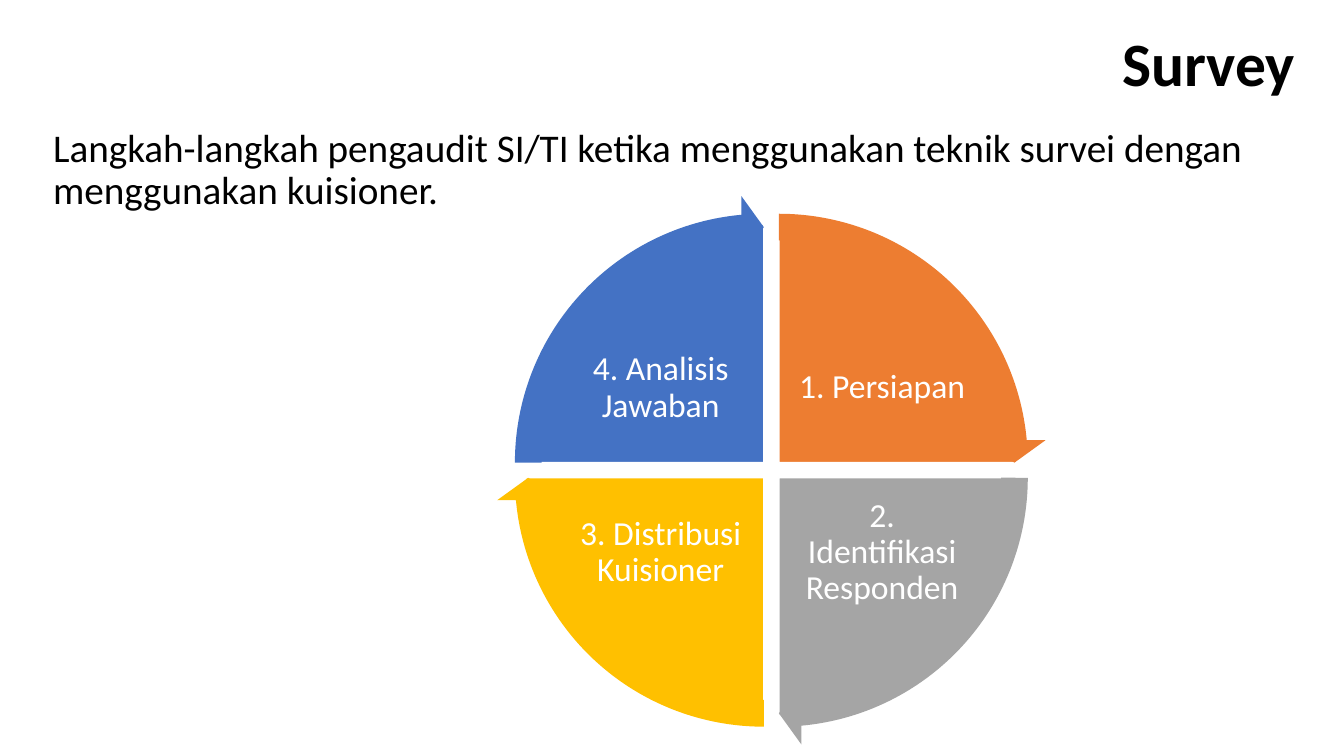
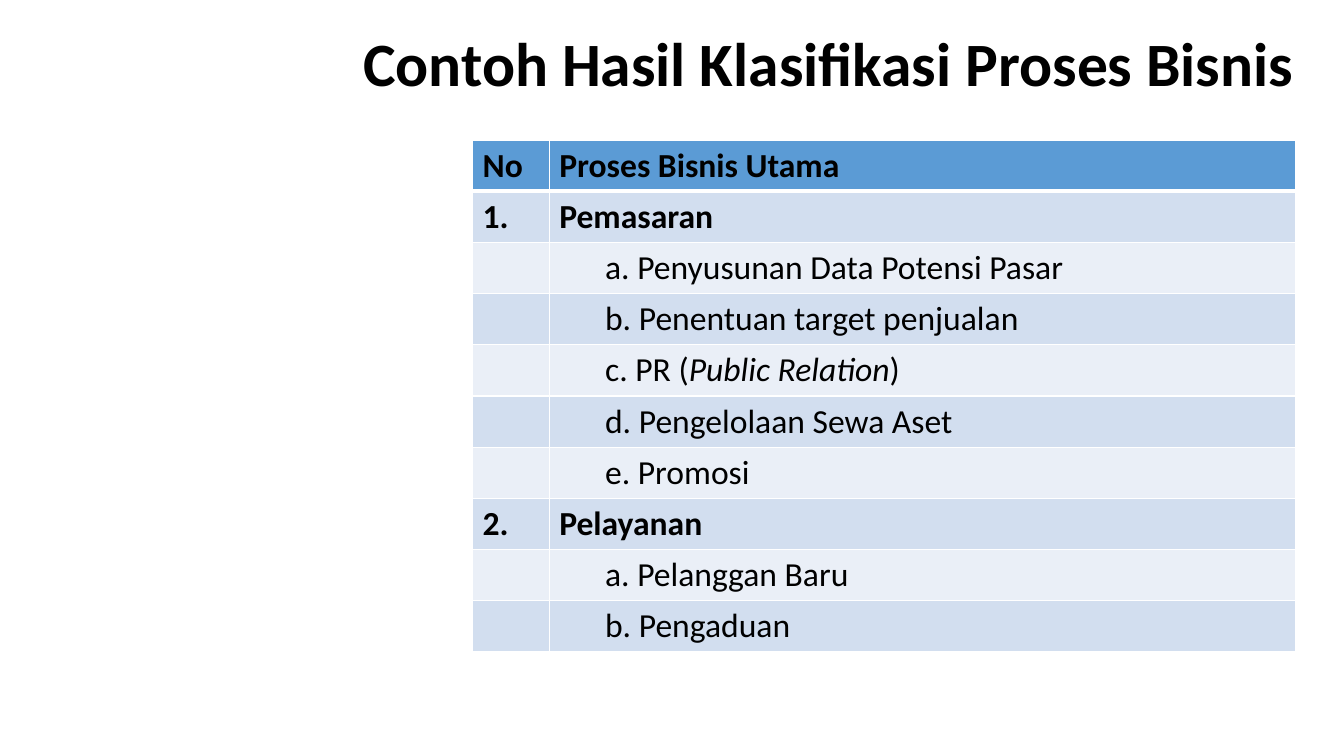
from lxml import etree
from pptx import Presentation
from pptx.dml.color import RGBColor
from pptx.enum.shapes import MSO_SHAPE
from pptx.enum.text import MSO_ANCHOR, MSO_AUTO_SIZE, PP_ALIGN
from pptx.oxml.ns import qn
from pptx.util import Cm, Pt

COLORS = {
    "text": "000000", "white": "FFFFFF",
    "orange": "ED7D31", "gray": "A5A5A5", "gold": "FFC000", "blue": "4472C4",
    "header": "5B9BD5", "band": "D2DEEF", "band_light": "EAEFF7",
}
FONT = "Calibri"
QUARTER = 54  # 90 degrees in adjustment units


def rgb(name):
    return RGBColor.from_string(COLORS[name])


class Deck:
    """Holds the presentation, its style and the current slide."""

    def __init__(self):
        self.prs = Presentation()
        self.prs.slide_width, self.prs.slide_height = Cm(33.87), Cm(19.05)
        self.s = None

    def font(self, p, size, color="text", bold=False):
        p.font.name, p.font.size, p.font.bold = FONT, Pt(size), bold
        p.font.color.rgb = rgb(color)

    def slide(self, title):
        self.s = self.prs.slides.add_slide(self.prs.slide_layouts[5])
        sp = self.s.shapes.title
        sp.left, sp.top, sp.width, sp.height = Cm(6.27), Cm(0.53), Cm(26.62), Cm(2.31)
        tf = sp.text_frame
        tf.text = title
        tf.auto_size = MSO_AUTO_SIZE.NONE
        tf.vertical_anchor = MSO_ANCHOR.MIDDLE
        p = tf.paragraphs[0]
        p.alignment, p.line_spacing = PP_ALIGN.RIGHT, 0.9
        self.font(p, 44, bold=True)

    def text(self, text, x, y, w, h, size, color="text"):
        tf = self.s.shapes.add_textbox(Cm(x), Cm(y), Cm(w), Cm(h)).text_frame
        tf.word_wrap = True
        tf.text = text
        tf.paragraphs[0].line_spacing = 0.9
        self.font(tf.paragraphs[0], size, color)
        return tf

    def label(self, text, cx, cy, w, h):
        """Add white text centred on a point."""
        tf = self.text(text, cx - w / 2, cy - h / 2, w, h, 24, "white")
        tf.margin_left = tf.margin_right = tf.margin_top = tf.margin_bottom = Cm(0.08)
        tf.vertical_anchor = MSO_ANCHOR.MIDDLE
        tf.paragraphs[0].alignment = PP_ALIGN.CENTER

    def round_shape(self, kind, cx, cy, size, adjustments, color, outline=None):
        """Add a preset shape in a square centred on a point."""
        sp = self.s.shapes.add_shape(
            kind, Cm(cx - size / 2), Cm(cy - size / 2), Cm(size), Cm(size))
        for i, value in enumerate(adjustments):
            sp.adjustments[i] = value
        sp.shadow.inherit = False
        sp.fill.solid()
        sp.fill.fore_color.rgb = rgb(color)
        if outline:
            sp.line.color.rgb = rgb(outline)
            sp.line.width = Pt(1)
        else:
            sp.line.fill.background()

    def borders(self, cell, top, bottom):
        """Draw white cell borders; top and bottom are widths in points."""
        tcPr = cell._tc.get_or_add_tcPr()
        for side, width in (("L", 1), ("R", 1), ("T", top), ("B", bottom)):
            ln = etree.SubElement(tcPr, qn(f"a:ln{side}"), w=str(Pt(width)))
            fill = etree.SubElement(ln, qn("a:solidFill"))
            etree.SubElement(fill, qn("a:srgbClr"), val=COLORS["white"])

    def table(self, rows, x, y, widths, row_height):
        """Add a table; a row without a number is an indented sub-item."""
        table = self.s.shapes.add_table(
            len(rows), len(widths), Cm(x), Cm(y),
            Cm(sum(widths)), Cm(row_height * len(rows))).table
        table.first_row = table.horz_banding = False
        for column, width in zip(table.columns, widths):
            column.width = Cm(width)
        for i, (number, runs) in enumerate(rows):
            table.rows[i].height = Cm(row_height)
            color = "header" if i == 0 else "band" if i % 2 else "band_light"
            for j, parts in enumerate(([number], runs)):
                cell = table.cell(i, j)
                self.borders(cell, 3 if i == 1 else 1, 3 if i == 0 else 1)
                cell.fill.solid()
                cell.fill.fore_color.rgb = rgb(color)
                p = cell.text_frame.paragraphs[0]
                self.font(p, 24, bold=bool(number))
                for k, part in enumerate(filter(None, parts)):
                    r = p.add_run()
                    r.text = part
                    if k % 2:
                        r.font.italic = True
            if not number:
                table.cell(i, 1).margin_left = Cm(1.41)


def survey_slide(deck):
    deck.slide("Survey")
    deck.text("Langkah-langkah pengaudit SI/TI ketika menggunakan teknik survei "
              "dengan menggunakan kuisioner.", 1.09, 3.12, 31.8, 14.02, 28)
    cx, cy, gap = 19.44, 11.85, 0.19
    # text, colour, horizontal and vertical direction, start angle
    steps = [
        ("1. Persiapan", "orange", 1, -1, 3 * QUARTER),
        ("2. Identifikasi Responden", "gray", 1, 1, 0),
        ("3. Distribusi Kuisioner", "gold", -1, 1, QUARTER),
        ("4. Analisis Jawaban", "blue", -1, -1, 2 * QUARTER),
    ]
    for text, color, dx, dy, start in steps:
        end = (start + QUARTER) % (4 * QUARTER)
        deck.round_shape(MSO_SHAPE.PIE, cx + dx * gap, cy + dy * gap, 11.99,
                         (start, end), color, "white")
        deck.label(text, cx + dx * 2.79, cy + dy * 2.07, 4.42, 3.28)
    for _, color, dx, dy, start in steps:
        deck.round_shape(MSO_SHAPE.CIRCULAR_ARROW, cx + dx * gap, cy + dy * gap, 13.49,
                         (0.05, 3.28, start + 50.72, start, 0.06), color)


def process_slide(deck):
    deck.slide("Contoh Hasil Klasifikasi Proses Bisnis")
    rows = [
        ("No", ["Proses Bisnis Utama"]),
        ("1.", ["Pemasaran"]),
        ("", ["a. Penyusunan Data Potensi Pasar"]),
        ("", ["b. Penentuan target penjualan"]),
        ("", ["c. PR (", "Public Relation", ")"]),
        ("", ["d. Pengelolaan Sewa Aset"]),
        ("", ["e. Promosi"]),
        ("2.", ["Pelayanan"]),
        ("", ["a. Pelanggan Baru"]),
        ("", ["b. Pengaduan"]),
    ]
    deck.table(rows, 11.91, 3.53, (1.93, 18.82), 1.29)


def main():
    deck = Deck()
    survey_slide(deck)
    process_slide(deck)
    deck.prs.save("out.pptx")


if __name__ == "__main__":
    main()
